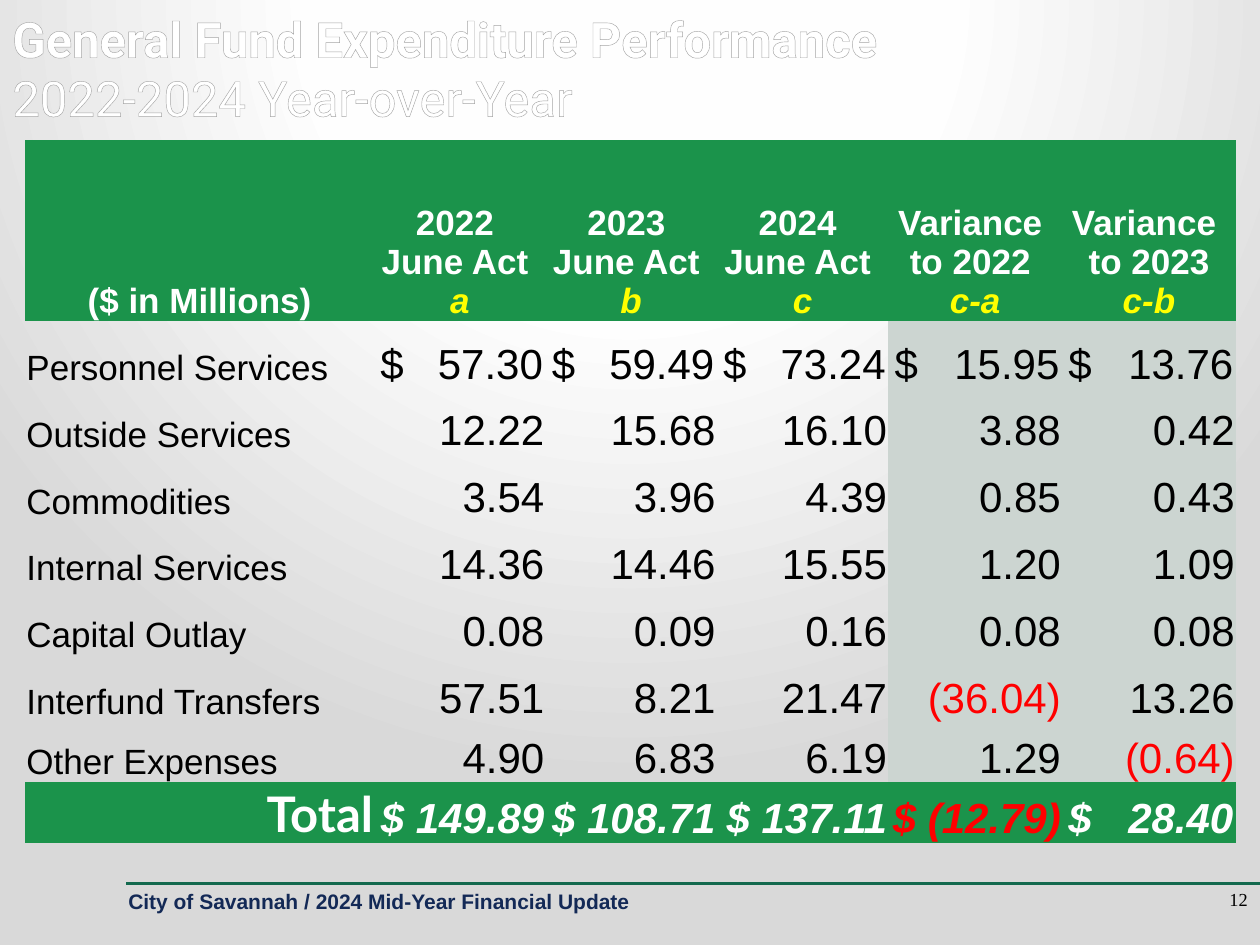
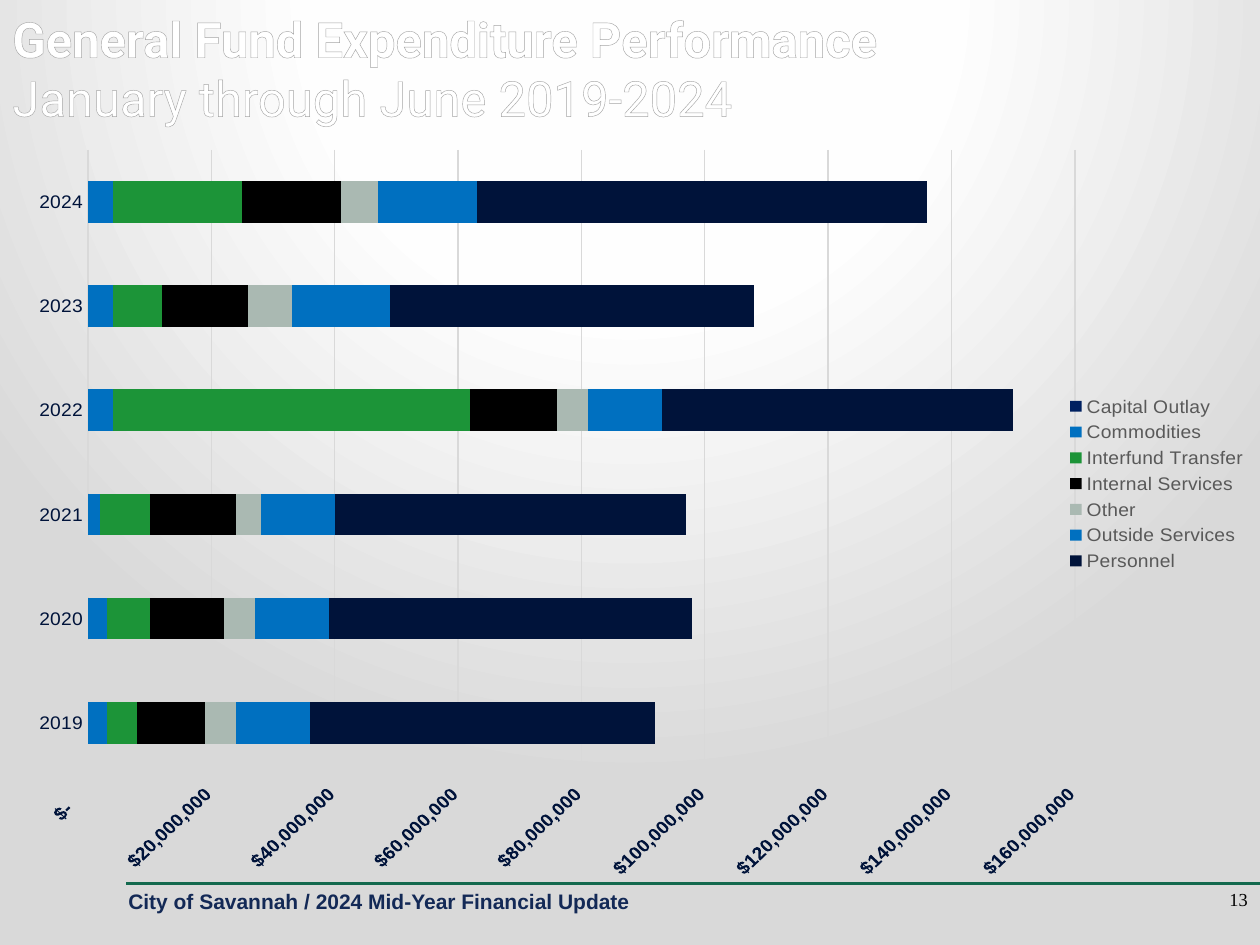
from pptx import Presentation
from pptx.chart.data import CategoryChartData
from pptx.dml.color import RGBColor
from pptx.enum.chart import XL_CHART_TYPE, XL_LEGEND_POSITION, XL_TICK_MARK
from pptx.enum.shapes import MSO_CONNECTOR
from pptx.enum.text import MSO_ANCHOR, PP_ALIGN
from pptx.oxml import parse_xml
from pptx.oxml.ns import nsdecls, qn
from pptx.util import Inches, Pt

LEFT, CENTER, RIGHT = PP_ALIGN.LEFT, PP_ALIGN.CENTER, PP_ALIGN.RIGHT
BOTTOM = MSO_ANCHOR.BOTTOM
NO_TICK = XL_TICK_MARK.NONE
STACKED_BAR = XL_CHART_TYPE.BAR_STACKED
LEGEND_RIGHT = XL_LEGEND_POSITION.RIGHT
STRAIGHT = MSO_CONNECTOR.STRAIGHT

WHITE = RGBColor(0xFF, 0xFF, 0xFF)
BLACK = RGBColor(0x00, 0x00, 0x00)
RED = RGBColor(0xFF, 0x00, 0x00)
YELLOW = RGBColor(0xFF, 0xFF, 0x00)
RULE_GREEN = RGBColor(0x13, 0x69, 0x4E)
BAND_GREEN = RGBColor(0x1B, 0x93, 0x4B)
VARIANCE_GRAY = RGBColor(0xCC, 0xD5, 0xD1)
FOOTER_NAVY = RGBColor(0x13, 0x29, 0x56)
DARK_NAVY = RGBColor(0x00, 0x13, 0x3A)
CAPITAL_NAVY = RGBColor(0x00, 0x20, 0x60)
BLUE = RGBColor(0x00, 0x70, 0xC0)
TRANSFER_GREEN = RGBColor(0x1C, 0x94, 0x38)
SAGE = RGBColor(0xAA, 0xB9, 0xB2)
GRID_GRAY = RGBColor(0xD9, 0xD9, 0xD9)
LEGEND_GRAY = RGBColor(0x59, 0x59, 0x59)
OUTLINE_GRAY = RGBColor(0xA6, 0xA6, 0xA6)

PLAIN_TABLE = "{2D5ABB26-0587-4C30-8999-92F81FD0307C}"
DOLLARS = '_("$"* #,##0_);_("$"* \\(#,##0\\);_("$"* "-"??_);_(@_)'


def write(para, text, size=20, color=BLACK, font="Arial", bold=False,
          italic=False, align=LEFT, outline=None):
    """Append text to a paragraph, turning each newline into a line break."""
    para.alignment = align
    for number, line in enumerate(text.split("\n")):
        if number:
            para.add_line_break()
        if not line:
            continue
        span = para.add_run()
        span.text = line
        span.font.size = Pt(size)
        span.font.name = font
        span.font.bold = bold
        span.font.italic = italic
        span.font.color.rgb = color
        if outline:
            span._r.get_or_add_rPr().insert(0, parse_xml(
                f'<a:ln {nsdecls("a")} w="9525"><a:solidFill>'
                f'<a:srgbClr val="{outline}"/></a:solidFill></a:ln>'))


def add_text(slide, left, top, width, height):
    """Add a wrapping text box and return its first paragraph."""
    frame = slide.shapes.add_textbox(
        Inches(left), Inches(top), Inches(width), Inches(height)).text_frame
    frame.word_wrap = True
    return frame.paragraphs[0]


deck = Presentation()
deck.slide_width, deck.slide_height = Inches(10), Inches(7.5)

# Shared background: a circular gradient centred above the slide
master = deck.slide_master
master.background.fill.solid()
solid = next(master.element.iter(qn("p:bgPr"))).find(qn("a:solidFill"))
stops = "".join(
    f'<a:gs pos="{position * 1000}"><a:srgbClr val="{color}"/></a:gs>'
    for position, color in [(0, "FFFFFF"), (40, "FEFEFE"), (100, "D9D9D9")])
solid.getparent().replace(solid, parse_xml(
    f'<a:gradFill {nsdecls("a")} rotWithShape="1"><a:gsLst>{stops}</a:gsLst>'
    '<a:path path="circle"><a:fillToRect l="50000" t="-80000" r="50000" '
    'b="180000"/></a:path></a:gradFill>'))

# Shared title, rule, footer and page number
slides = []
for page_number, subtitle in [(12, "2022-2024 Year-over-Year"),
                              (13, "January through June 2019-2024")]:
    slide = deck.slides.add_slide(deck.slide_layouts[6])
    slides.append(slide)

    rule = slide.shapes.add_connector(
        STRAIGHT, Inches(1), Inches(7.01), Inches(10), Inches(7.01))
    rule.line.color.rgb = RULE_GREEN
    rule.line.width = Pt(1.5)
    rule._element.spPr.append(parse_xml(f'<a:effectLst {nsdecls("a")}/>'))

    write(add_text(slide, 0.92, 7, 5, 0.5),
          "City of Savannah / 2024 Mid-Year Financial Update",
          size=12, color=FOOTER_NAVY, bold=True)
    title = add_text(slide, 0, 0.02, 10, 0.92)
    title_look = dict(size=28, color=WHITE, font="Roboto", outline=OUTLINE_GRAY)
    write(title, "General Fund Expenditure Performance\n", bold=True, **title_look)
    write(title, subtitle, **title_look)
    write(add_text(slide, 8.75, 7, 1.25, 0.5), str(page_number),
          size=10.5, font="Times New Roman", align=RIGHT)

table_slide, chart_slide = slides

# Expenditure table
headings = [("($ in Millions)", ""), ("2022 \nJune Act \n", "a"),
            ("2023 \nJune Act \n", "b"), ("2024 \nJune Act \n", "c"),
            ("Variance \nto 2022 \n", "c-a"), ("Variance \nto 2023\n", "c-b")]
expenses = [
    ("Personnel Services", "$\t57.30", "$\t59.49", "$\t73.24", "$\t15.95", "$\t13.76"),
    ("Outside Services", "12.22", "15.68", "16.10", "3.88", "0.42"),
    ("Commodities", "3.54", "3.96", "4.39", "0.85", "0.43"),
    ("Internal Services", "14.36", "14.46", "15.55", "1.20", "1.09"),
    ("Capital Outlay", "0.08", "0.09", "0.16", "0.08", "0.08"),
    ("Interfund Transfers", "57.51", "8.21", "21.47", "(36.04)", "13.26"),
    ("Other Expenses", "4.90", "6.83", "6.19", "1.29", "(0.64)"),
    ("Total", "$ 149.89", "$ 108.71", "$ 137.11", "$ (12.79)", "$\t28.40"),
]
column_widths = [2.77] + [1.36] * 3 + [1.38] * 2
row_heights = [1.44] + [0.53] * 6 + [0.48] * 2
total_row = len(expenses)

table_frame = table_slide.shapes.add_table(
    len(row_heights), len(column_widths),
    Inches(0.2), Inches(1.11), Inches(9.6), Inches(5.59))
next(table_frame._element.iter(qn("a:tableStyleId"))).text = PLAIN_TABLE
table = table_frame.table
for column, width in zip(table.columns, column_widths):
    column.width = Inches(width)
for row, height in zip(table.rows, row_heights):
    row.height = Inches(height)

for r in range(len(row_heights)):
    for c, width in enumerate(column_widths):
        cell = table.cell(r, c)
        cell.vertical_anchor = BOTTOM
        cell.margin_left = cell.margin_right = cell.margin_top = Inches(0.01)
        cell.margin_bottom = 0
        if r in (0, total_row):
            cell.fill.solid()
            cell.fill.fore_color.rgb = BAND_GREEN
        elif c >= 4:
            cell.fill.solid()
            cell.fill.fore_color.rgb = VARIANCE_GRAY
        else:
            cell.fill.background()

        para = cell.text_frame.paragraphs[0]
        if r == 0:
            heading, letter = headings[c]
            write(para, heading, color=WHITE, bold=True, align=CENTER)
            write(para, letter, color=YELLOW, bold=True, italic=True, align=CENTER)
            continue
        text = expenses[r - 1][c]
        if c == 0 and r == total_row:
            write(para, text, size=28, color=WHITE, font="Lato", bold=True, align=RIGHT)
        elif c == 0:
            write(para, text)
        else:
            has_tab = "\t" in text
            if has_tab:
                cell.margin_left = Inches(0.05)
                para._p.get_or_add_pPr().append(parse_xml(
                    f'<a:tabLst {nsdecls("a")}><a:tab '
                    f'pos="{Inches(width - 0.07)}" algn="r"/></a:tabLst>'))
            is_total = r == total_row
            color = RED if "(" in text else WHITE if is_total else BLACK
            write(para, text, size=24, color=color, bold=is_total,
                  italic=is_total, align=LEFT if has_tab else RIGHT)

# Stacked bars of spending by year, in millions of dollars
spending = [
    ("Capital Outlay", CAPITAL_NAVY, (0, 0, 0, 0, 0, 0)),
    ("Commodities", BLUE, (3, 3, 2, 4, 4, 4)),
    ("Interfund Transfer", TRANSFER_GREEN, (5, 7, 8, 58, 8, 21)),
    ("Internal Services", BLACK, (11, 12, 14, 14, 14, 16)),
    ("Other", SAGE, (5, 5, 4, 5, 7, 6)),
    ("Outside Services", BLUE, (12, 12, 12, 12, 16, 16)),
    ("Personnel", DARK_NAVY, (56, 59, 57, 57, 59, 73)),
]
chart_data = CategoryChartData(number_format=DOLLARS)
chart_data.categories = [str(year) for year in range(2019, 2025)]
for name, color, millions in spending:
    chart_data.add_series(name, [value * 1_000_000 for value in millions])
chart = chart_slide.shapes.add_chart(
    STACKED_BAR, Inches(0.21), Inches(1.02), Inches(9.79), Inches(5.98),
    chart_data).chart
chart.has_title = False
chart.font.size = Pt(10)
chart.font.name = "Arial"
chart.font.color.rgb = BLACK

plot = chart.plots[0]
plot.gap_width = 150
plot.overlap = 100
plot.vary_by_categories = False
for series, (name, color, millions) in zip(plot.series, spending):
    series.format.fill.solid()
    series.format.fill.fore_color.rgb = color

chart.has_legend = True
chart.legend.position = LEGEND_RIGHT
chart.legend.include_in_layout = False
years, dollars = chart.category_axis, chart.value_axis
for font, color in [(years.tick_labels.font, DARK_NAVY),
                    (dollars.tick_labels.font, DARK_NAVY),
                    (chart.legend.font, LEGEND_GRAY)]:
    font.size = Pt(11)
    font.name = "Arial"
    font.color.rgb = color
for axis in (years, dollars):
    axis.major_tick_mark = axis.minor_tick_mark = NO_TICK
years.has_major_gridlines = False
dollars.has_major_gridlines = True
for line in (years.format.line, dollars.major_gridlines.format.line):
    line.color.rgb = GRID_GRAY
    line.width = Pt(0.75)
dollars.format.line.fill.background()
dollars.minimum_scale = 0
dollars.maximum_scale = 160_000_000
dollars.major_unit = 20_000_000
dollars.tick_labels.font.bold = True
dollars.tick_labels.number_format = DOLLARS
dollars.tick_labels.number_format_is_linked = False
next(dollars._element.iter(qn("a:bodyPr"))).set("rot", "-2700000")

plot_area = next(chart._chartSpace.iter(qn("c:plotArea")))
for layout in plot_area.findall(qn("c:layout")):
    plot_area.remove(layout)
plot_area.insert(0, parse_xml(
    f'<c:layout {nsdecls("c")}><c:manualLayout><c:layoutTarget val="inner"/>'
    '<c:xMode val="edge"/><c:yMode val="edge"/><c:x val="0.05"/><c:y val="0.03"/>'
    '<c:w val="0.8"/><c:h val="0.88"/></c:manualLayout></c:layout>'))

deck.save("out.pptx")
